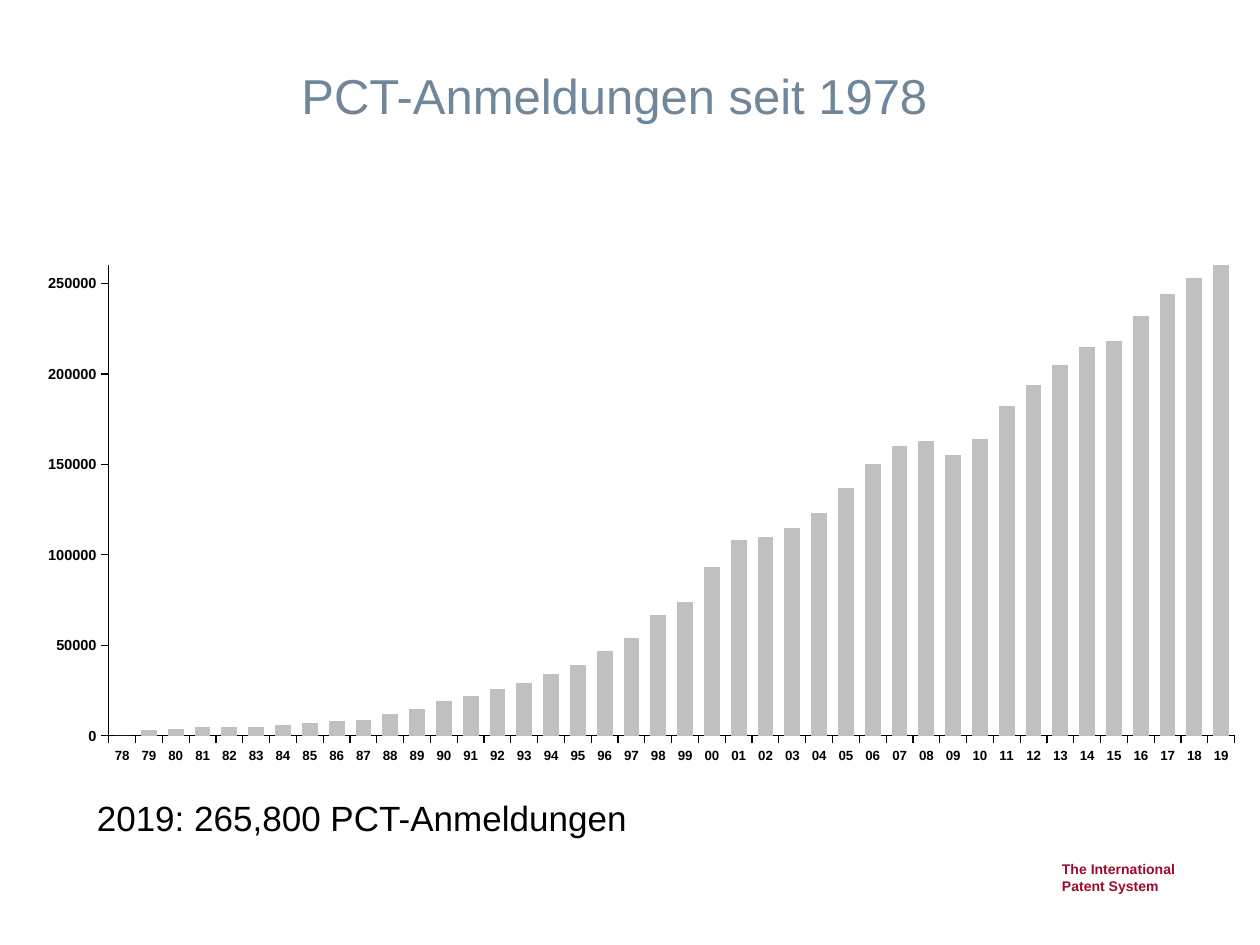
from lxml import etree
from pptx import Presentation
from pptx.chart.data import CategoryChartData
from pptx.dml.color import RGBColor
from pptx.enum.chart import XL_CHART_TYPE as ChartType, XL_TICK_LABEL_POSITION as LabelPosition
from pptx.enum.chart import XL_TICK_MARK as TickMark
from pptx.enum.text import MSO_ANCHOR as Anchor, PP_ALIGN as Align
from pptx.oxml.ns import qn
from pptx.util import Inches, Pt

FONT = "Arial"
COLORS = {"title": "70869B", "text": "000000", "footer": "9D0A2B", "bar": "C0C0C0"}

# PCT applications in thousands, one value per year
FIRST_YEAR = 1978
APPLICATIONS = [
    0, 3, 4, 5, 5, 5, 6, 7, 8, 9, 12, 15, 19, 22, 26, 29, 34, 39, 47, 54, 67,
    74, 93, 108, 110, 115, 123, 137, 150, 160, 163, 155, 164, 182, 194, 205,
    215, 218, 232, 244, 253, 266,
]


def style_font(font, size, color, bold=False):
    font.name = FONT
    font.size = Pt(size)
    font.bold = bold
    font.color.rgb = RGBColor.from_string(COLORS[color])


def add_text(slide, box, text, size, color, bold=False, align=Align.LEFT,
             anchor=Anchor.TOP, wrap=True):
    shape = slide.shapes.add_textbox(*(Inches(value) for value in box))
    text_frame = shape.text_frame
    text_frame.word_wrap = wrap
    text_frame.vertical_anchor = anchor
    paragraph = text_frame.paragraphs[0]
    paragraph.text = text
    paragraph.alignment = align
    for run in paragraph.runs:
        style_font(run.font, size, color, bold)


def style_axis(axis, size):
    axis.has_major_gridlines = False
    axis.major_tick_mark = TickMark.OUTSIDE
    axis.minor_tick_mark = TickMark.NONE
    axis.format.line.color.rgb = RGBColor.from_string(COLORS["text"])
    axis.format.line.width = Pt(0.69)
    style_font(axis.tick_labels.font, size, "text", bold=True)


def set_plot_layout(chart, x, y, w, h):
    plot_area = chart.plots[0]._element.getparent()
    layout = plot_area.find(qn("c:layout"))
    if layout is None:
        layout = etree.Element(qn("c:layout"))
        plot_area.insert(0, layout)
    manual = etree.SubElement(layout, qn("c:manualLayout"))
    settings = {"layoutTarget": "inner", "xMode": "edge", "yMode": "edge",
                "x": x, "y": y, "w": w, "h": h}
    for tag, value in settings.items():
        etree.SubElement(manual, qn(f"c:{tag}")).set("val", str(value))


def add_column_chart(slide, box):
    data = CategoryChartData()
    data.categories = [f"{(FIRST_YEAR + i) % 100:02d}" for i in range(len(APPLICATIONS))]
    data.add_series("Series 1", [value * 1000 for value in APPLICATIONS])
    frame = slide.shapes.add_chart(
        ChartType.COLUMN_CLUSTERED, *(Inches(value) for value in box), data)
    chart = frame.chart
    chart.has_legend = False
    chart.has_title = False
    style_font(chart.font, 17.1, "text", bold=True)

    # Columns
    plot = chart.plots[0]
    plot.gap_width = 70
    plot.vary_by_categories = False
    fill = plot.series[0].format.fill
    fill.solid()
    fill.fore_color.rgb = RGBColor.from_string(COLORS["bar"])

    # Axes
    style_axis(chart.category_axis, 7.6)
    chart.category_axis.tick_label_position = LabelPosition.LOW
    style_axis(chart.value_axis, 8.3)
    chart.value_axis.minimum_scale = 0
    chart.value_axis.maximum_scale = 260000
    chart.value_axis.major_unit = 50000
    chart.value_axis.tick_labels.number_format = "0"
    chart.value_axis.tick_labels.number_format_is_linked = False
    set_plot_layout(chart, 0.09, 0.18, 0.89, 0.75)


def main():
    presentation = Presentation()
    presentation.slide_width = Inches(10)
    presentation.slide_height = Inches(7.5)
    slide = presentation.slides.add_slide(presentation.slide_layouts[6])

    # Footer
    add_text(slide, (8.33, 6.78, 1.56, 0.33), "The International\vPatent System",
             8, "footer", bold=True, wrap=False)
    # Title
    add_text(slide, (0.94, 0.29, 7.87, 0.93), "PCT-Anmeldungen seit 1978",
             28, "title", align=Align.CENTER, anchor=Anchor.MIDDLE)
    # Chart and its key figure
    add_column_chart(slide, (-0.04, 1.21, 10.04, 4.98))
    add_text(slide, (0.67, 6.27, 8.45, 0.44), "2019: 265,800 PCT-Anmeldungen",
             20, "text")

    presentation.save("out.pptx")


if __name__ == "__main__":
    main()
